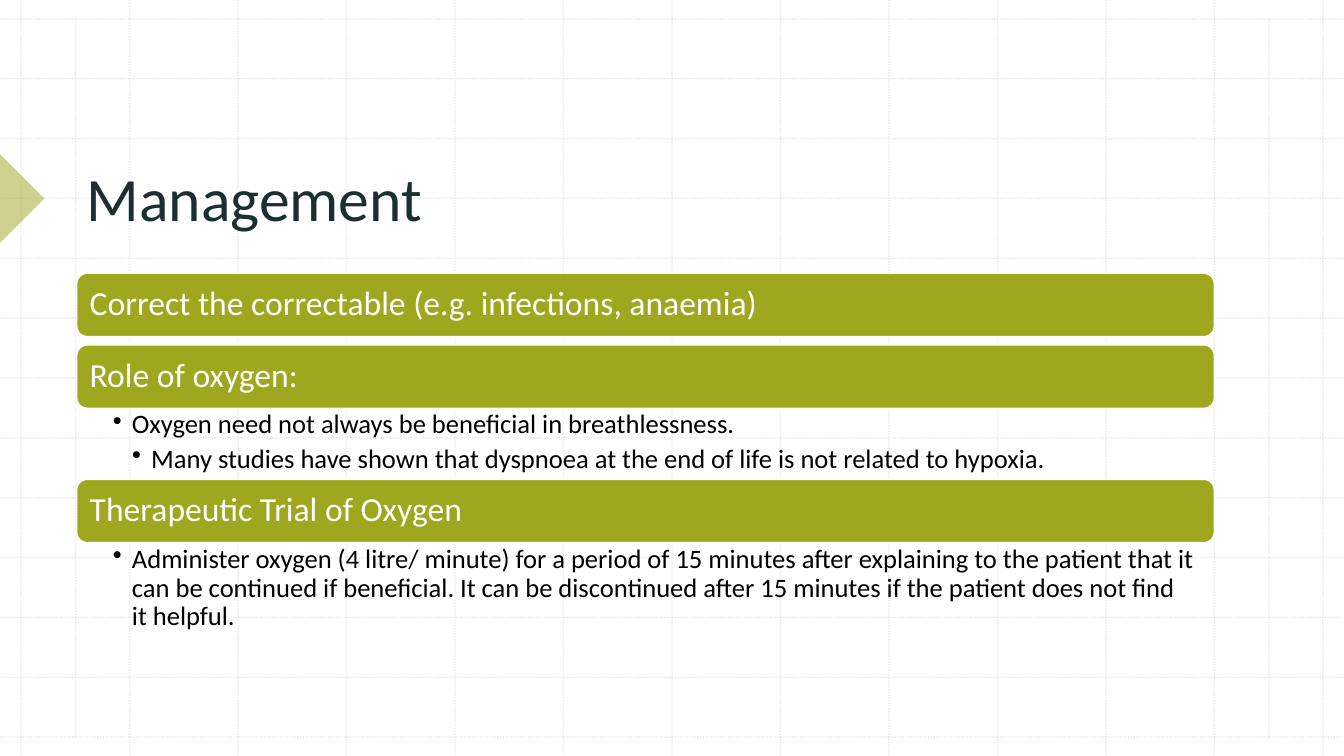
import dataclasses

import pptx
import pptx.dml.color
import pptx.enum.dml
import pptx.enum.shapes
import pptx.enum.text
import pptx.oxml.ns
import pptx.oxml.xmlchemy
import pptx.util
from lxml import etree

Pt = pptx.util.Pt
ANCHOR = pptx.enum.text.MSO_ANCHOR
SHAPE = pptx.enum.shapes.MSO_SHAPE


@dataclasses.dataclass(frozen=True)
class Theme:
    font: str = "Calibri"
    grid: str = "BCBCBC"
    accent: str = "9FA71E"
    title: str = "1B2F30"
    body: str = "000000"
    white: str = "FFFFFF"
    title_size: float = 44
    bar_size: float = 24
    bullet_size: float = 19


THEME = Theme()
WIDTH, HEIGHT = 960, 540
BAR_HEIGHT = 45.2
BAR_GAP = 6
BULLET_INDENT = 13.7
SECTIONS = [
    ("Correct the correctable (e.g. infections, anaemia)", [], BAR_GAP),
    (
        "Role of oxygen:",
        [
            (1, "Oxygen need not always be beneficial in breathlessness."),
            (2, "Many studies have shown that dyspnoea at the end of life is not related to hypoxia."),
        ],
        50.8,
    ),
    (
        "Therapeutic Trial of Oxygen",
        [
            (
                1,
                "Administer oxygen (4 litre/ minute) for a period of 15 minutes after explaining "
                "to the patient that it can be continued if beneficial. It can be discontinued "
                "after 15 minutes if the patient does not find it helpful.",
            )
        ],
        66.2,
    ),
]


def rgb(value):
    return pptx.dml.color.RGBColor.from_string(value)


def add_child(parent, tag, **attributes):
    return etree.SubElement(parent, pptx.oxml.ns.qn(tag), attributes)


def set_alpha(properties, percent):
    for color in properties.iter(pptx.oxml.ns.qn("a:srgbClr")):
        add_child(color, "a:alpha", val=str(percent * 1000))


def set_frame(shape, anchor, insets):
    frame = shape.text_frame
    frame.word_wrap = True
    frame.vertical_anchor = anchor
    frame.margin_left, frame.margin_top, frame.margin_right, frame.margin_bottom = map(Pt, insets)
    return frame


def write(para, text, *, size, color, spacing=1.0, after=0, level=0):
    para.alignment = pptx.enum.text.PP_ALIGN.LEFT
    para.line_spacing = spacing
    para.space_after = Pt(after)
    span = para.add_run()
    span.text = text
    span.font.name = THEME.font
    span.font.size = Pt(size)
    span.font.color.rgb = rgb(color)
    if level:
        para.level = level
        properties = para._p.get_or_add_pPr()
        properties.set("marL", str(Pt(BULLET_INDENT * level)))
        properties.set("indent", str(-Pt(BULLET_INDENT)))
        add_child(properties, "a:buChar", char="•")


def add_grid_line(page, x1, y1, x2, y2):
    line = page.shapes.add_connector(
        pptx.enum.shapes.MSO_CONNECTOR.STRAIGHT, Pt(x1), Pt(y1), Pt(x2), Pt(y2)
    )
    line.line.color.rgb = rgb(THEME.grid)
    line.line.width = Pt(1)
    line.line.dash_style = pptx.enum.dml.MSO_LINE.ROUND_DOT
    set_alpha(line._element.spPr, 30)
    add_child(line._element.spPr, "a:effectLst")


def add_grid(page, left, top, width, height):
    margin_x, margin_y = 15.1, 13.5
    step_x = (width - 2 * margin_x) / 12
    step_y = (height - 2 * margin_y) / 12
    for index in range(13):
        x = left + margin_x + index * step_x
        y = top + margin_y + index * step_y
        add_grid_line(page, x, top, x, top + height)
        add_grid_line(page, left, y, left + width, y)
    for x in (left + 54, left + width - 53.5):
        add_grid_line(page, x, top + margin_y, x, top + height - margin_y)


def add_marker(page, left, top, width, height):
    marker = page.shapes.add_shape(SHAPE.RIGHT_TRIANGLE, Pt(left), Pt(top), Pt(width), Pt(height))
    marker.shadow.inherit = False
    marker.rotation = 225
    marker.fill.solid()
    marker.fill.fore_color.rgb = rgb(THEME.accent)
    set_alpha(marker._element.spPr, 50)
    marker.line.fill.background()


def add_title(page, left, top, width, height):
    box = page.shapes.add_textbox(Pt(left), Pt(top), Pt(width), Pt(height))
    frame = set_frame(box, ANCHOR.BOTTOM, (7.2, 3.6, 7.2, 3.6))
    write(frame.paragraphs[0], "Management", size=THEME.title_size, color=THEME.title, spacing=0.9)


def add_bar(page, text, left, top, width, height):
    bar = page.shapes.add_shape(SHAPE.ROUNDED_RECTANGLE, Pt(left), Pt(top), Pt(width), Pt(height))
    bar.shadow.inherit = False
    bar.fill.solid()
    bar.fill.fore_color.rgb = rgb(THEME.accent)
    bar.line.color.rgb = rgb(THEME.white)
    bar.line.width = Pt(1)
    frame = set_frame(bar, ANCHOR.MIDDLE, (7.2, 7.2, 7.2, 7.2))
    write(frame.paragraphs[0], text, size=THEME.bar_size, color=THEME.white, spacing=0.9)


def add_bullets(page, bullets, left, top, width, height):
    box = page.shapes.add_textbox(Pt(left), Pt(top), Pt(width), Pt(height))
    frame = set_frame(box, ANCHOR.TOP, (25.8, 2, 13.5, 2))
    for index, (level, text) in enumerate(bullets):
        para = frame.add_paragraph() if index else frame.paragraphs[0]
        write(para, text, size=THEME.bullet_size, color=THEME.body,
              spacing=0.9, after=3.8, level=level)


def add_sections(page, left, top, width):
    for heading, bullets, space_below in SECTIONS:
        add_bar(page, heading, left, top, width, BAR_HEIGHT)
        top += BAR_HEIGHT
        if bullets:
            add_bullets(page, bullets, left, top, width, space_below)
        top += space_below


def main():
    deck = pptx.Presentation()
    deck.slide_width, deck.slide_height = Pt(WIDTH), Pt(HEIGHT)
    page = deck.slides.add_slide(deck.slide_layouts[6])
    add_grid(page, 0, 0, WIDTH, HEIGHT)
    add_marker(page, -22.4, 119.4, 44.8, 44.8)
    add_title(page, 54.8, 57, 812.6, 114)
    add_sections(page, 54.8, 195.2, 812.6)
    deck.save("out.pptx")


if __name__ == "__main__":
    main()
